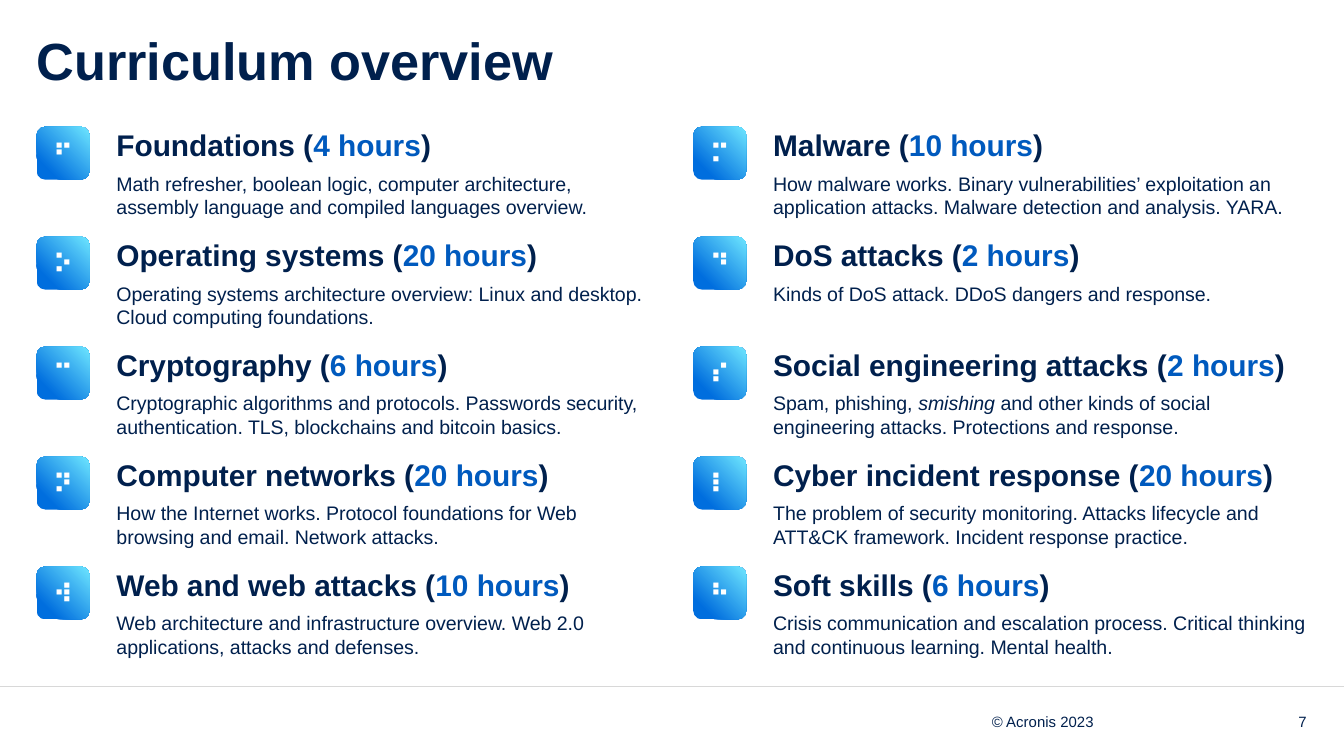
"""Build the curriculum overview slide."""
from copy import deepcopy

from lxml import etree
from pptx import Presentation
from pptx import util as u
from pptx.dml.color import RGBColor
from pptx.enum import shapes, text
from pptx.oxml import ns

TITLE = "Curriculum overview"
COPYRIGHT = "© Acronis 2023"
PAGE = "7"
COLUMNS = [
    [
        ("⠋", "Foundations", "4 hours",
         ["Math refresher, boolean logic, computer architecture, assembly language and compiled languages overview."]),
        ("⠕", "Operating systems", "20 hours",
         ["Operating systems architecture overview: Linux and desktop. Cloud computing foundations."]),
        ("⠉", "Cryptography", "6 hours",
         ["Cryptographic algorithms and protocols. Passwords security, authentication. "
          "TLS, blockchains and bitcoin basics."]),
        ("⠝", "Computer networks", "20 hours",
         ["How the Internet works. Protocol foundations for Web browsing and email. Network attacks."]),
        ("⠺", "Web and web attacks", "10 hours",
         ["Web architecture and infrastructure overview. Web 2.0 applications, attacks and defenses."]),
    ],
    [
        ("⠍", "Malware", "10 hours",
         ["How malware works. Binary vulnerabilities’ exploitation an application attacks. "
          "Malware detection and analysis. YARA."]),
        ("⠙", "DoS attacks", "2 hours",
         ["Kinds of DoS attack. DDoS dangers and response."]),
        ("⠎", "Social engineering attacks", "2 hours",
         ["Spam, phishing, ", ("smishing", {"italic": True}),
          " and other kinds of social engineering attacks. Protections and response."]),
        ("⠇", "Cyber incident response", "20 hours",
         ["The problem of security monitoring. Attacks lifecycle and ATT&CK framework. Incident response practice."]),
        ("⠓", "Soft skills", "6 hours",
         ["Crisis communication and escalation process. Critical thinking and continuous learning. Mental health."]),
    ],
]
COLORS = {"navy": "00204D", "blue": "005ABE", "white": "FFFFFF", "rule": "D8D8D8",
          "icon_dark": "006EDE", "icon_light": "6EE6FF"}
FONT = "Arial"
WIDTH, HEIGHT = 720, 405
MARGIN, TOP = 19.6, 67.9
COLUMN_PITCH, ROW_PITCH = 351.8, 58.9
ICON_SIZE, TEXT_INDENT, TEXT_WIDTH = 28.4, 42.8, 286.6
HEADING_HEIGHT, BODY_OFFSET, BODY_HEIGHT = 18.7, 24, 28
FOOTER_TOP = 367.9


def rgb(name):
    return RGBColor.from_string(COLORS[name])


def points(*lengths):
    return [u.Pt(length) for length in lengths]


def write(shape, runs, size, color="navy", bold=False, align=text.PP_ALIGN.LEFT,
          anchor=text.MSO_ANCHOR.TOP, line_spacing=None):
    frame = shape.text_frame
    frame.word_wrap = True
    frame.vertical_anchor = anchor
    frame.margin_left = frame.margin_right = frame.margin_top = frame.margin_bottom = 0
    paragraph = frame.paragraphs[0]
    paragraph.alignment = align
    paragraph.line_spacing = line_spacing
    for item in runs:
        words, style = (item, {}) if isinstance(item, str) else item
        run = paragraph.add_run()
        run.text = words
        run.font.name = FONT
        run.font.size = u.Pt(size)
        run.font.bold = bold
        run.font.italic = style.get("italic", False)
        run.font.color.rgb = rgb(style.get("color", color))


def add_text(slide, box, runs, size, **style):
    write(slide.shapes.add_textbox(*points(*box)), runs, size, **style)


def add_icon(slide, left, top, symbol):
    icon = slide.shapes.add_shape(shapes.MSO_SHAPE.ROUNDED_RECTANGLE,
                                  *points(left, top, ICON_SIZE, ICON_SIZE))
    icon.shadow.inherit = False
    icon.adjustments[0] = 0.167
    icon.line.fill.background()
    icon.fill.gradient()
    icon.fill.gradient_angle = 45
    for stop, position, color in zip(icon.fill.gradient_stops, (0, 1), ("icon_dark", "icon_light")):
        stop.position = position
        stop.color.rgb = rgb(color)
    first = next(icon.element.iter(ns.qn("a:gs")))
    middle = deepcopy(first)
    middle.set("pos", "20000")
    first.addnext(middle)
    write(icon, [symbol], 14, color="white", bold=True,
          align=text.PP_ALIGN.CENTER, anchor=text.MSO_ANCHOR.MIDDLE)


def add_topic(slide, left, top, topic):
    symbol, name, hours, description = topic
    text_left = left + TEXT_INDENT
    heading = [f"{name} (", (hours, {"color": "blue"}), ")"]
    add_text(slide, (text_left, top, TEXT_WIDTH, HEADING_HEIGHT), heading, 16, bold=True)
    add_text(slide, (text_left, top + BODY_OFFSET, TEXT_WIDTH, BODY_HEIGHT), description, 10.5)
    add_icon(slide, left, top, symbol)


def add_footer(slide):
    rule = slide.shapes.add_connector(shapes.MSO_CONNECTOR.STRAIGHT,
                                      *points(0, FOOTER_TOP, WIDTH, FOOTER_TOP))
    rule.line.color.rgb = rgb("rule")
    rule.line.width = u.Pt(0.75)
    etree.SubElement(rule.element.spPr, ns.qn("a:effectLst"))
    for words, right, width in ((PAGE, 700, 41), (COPYRIGHT, 586, 116.6)):
        add_text(slide, (right - width, FOOTER_TOP, width, HEIGHT - FOOTER_TOP), [words], 8,
                 align=text.PP_ALIGN.RIGHT, anchor=text.MSO_ANCHOR.MIDDLE)


def main():
    presentation = Presentation()
    presentation.slide_width, presentation.slide_height = points(WIDTH, HEIGHT)
    slide = presentation.slides.add_slide(presentation.slide_layouts[6])
    add_footer(slide)
    add_text(slide, (MARGIN, 18.7, 680.4, 38.9), [TITLE], 28, bold=True, line_spacing=0.9)
    for column, topics in enumerate(COLUMNS):
        for row, topic in enumerate(topics):
            add_topic(slide, MARGIN + column * COLUMN_PITCH, TOP + row * ROW_PITCH, topic)
    presentation.save("out.pptx")


if __name__ == "__main__":
    main()
